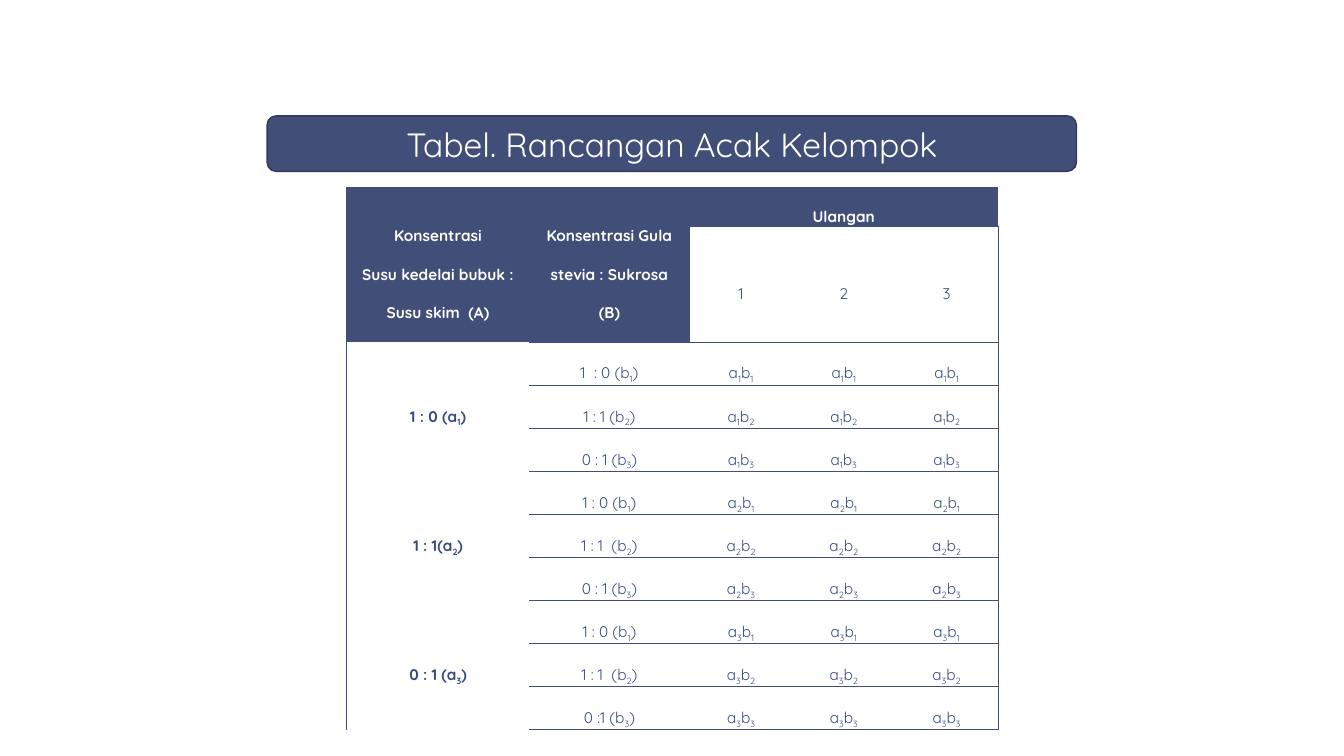
from lxml import etree
from pptx import Presentation
from pptx.dml.color import RGBColor
from pptx.enum.shapes import MSO_SHAPE
from pptx.enum.text import MSO_ANCHOR, PP_ALIGN
from pptx.oxml.ns import qn
from pptx.util import Cm, Pt

CENTER = PP_ALIGN.CENTER
MIDDLE = MSO_ANCHOR.MIDDLE
ROUNDED = MSO_SHAPE.ROUNDED_RECTANGLE
FONT = "Quicksand"
COLORS = {"navy": "414E77", "outline": "303A58", "body": "374C81", "white": "FFFFFF"}
PLAIN_STYLE = "{2D5ABB26-0587-4C30-8999-92F81FD0307C}"
COLUMN_WIDTHS = [4.6, 4.04, 2.59, 2.59, 2.59]
ROW_HEIGHTS = [0.97, 2.87] + [0.97] * 9
SOY_LEVELS = ["1 : 0 (a_1)", "1 : 1(a_2)", "0 : 1 (a_3)"]
SUGAR_LEVELS = [
    ["1  : 0 (b_1)", "1 : 1 (b_2)", "0 : 1 (b_3)"],
    ["1 : 0 (b_1)", "1 : 1  (b_2)", "0 : 1 (b_3)"],
    ["1 : 0 (b_1)", "1 : 1  (b_2)", "0 :1 (b_3)"],
]


def color(name):
    """Return the named colour."""
    return RGBColor.from_string(COLORS[name])


def style_span(span, size, tint, bold=False):
    """Set the font of one run."""
    span.font.name = FONT
    span.font.size = Pt(size)
    span.font.bold = bold
    span.font.color.rgb = color(tint)


def add_title(page, text):
    """Add the rounded title bar."""
    box = page.shapes.add_shape(ROUNDED, Cm(6.73), Cm(2.92), Cm(20.4), Cm(1.4))
    box.shadow.inherit = False
    box.fill.solid()
    box.fill.fore_color.rgb = color("navy")
    box.line.color.rgb = color("outline")
    box.line.width = Pt(1)
    frame = box.text_frame
    frame.text = text
    frame.vertical_anchor = MIDDLE
    frame.paragraphs[0].alignment = CENTER
    style_span(frame.paragraphs[0].runs[0], 24, "white")


def add_spans(para, text, tint, bold):
    """Add text to a paragraph, lowering the character after each underscore."""
    first, *rest = text.split("_")
    pieces = [(first, False)]
    for piece in rest:
        pieces += [(piece[0], True), (piece[1:], False)]
    for piece, lowered in pieces:
        if piece:
            span = para.add_run()
            span.text = piece
            style_span(span, 11, tint, bold)
            if lowered:
                span.font._element.set("baseline", "-25000")


def fill_cell(cell, text, tint="body", bold=False):
    """Write centred, double-spaced text into a cell."""
    cell.vertical_anchor = MIDDLE
    cell.margin_left = cell.margin_right = Cm(0.19)
    cell.margin_top = cell.margin_bottom = 0
    frame = cell.text_frame
    for index, line in enumerate(text.split("\n")):
        para = frame.add_paragraph() if index else frame.paragraphs[0]
        para.alignment = CENTER
        para.line_spacing = 2.0
        add_spans(para, line, tint, bold)


def set_borders(cell, sides):
    """Draw thin navy borders on the given sides of a cell."""
    properties = cell._tc.get_or_add_tcPr()
    for side in "LRTB":
        if side in sides:
            line = etree.SubElement(properties, qn("a:ln" + side), w=str(Pt(0.5)))
            paint = etree.SubElement(line, qn("a:solidFill"))
            etree.SubElement(paint, qn("a:srgbClr"), val=COLORS["navy"])


def cell_sides(row, column):
    """Return the bordered sides of the cell at a grid position."""
    sides = "L" if column == 0 else "R" if column == 4 else ""
    if row == 0:
        sides += "T"
    if column or row % 3 == 1:
        sides += "B"
    return sides


def add_plain_table(page):
    """Add the empty table with its grid, borders and fills."""
    frame = page.shapes.add_table(
        len(ROW_HEIGHTS), len(COLUMN_WIDTHS), Cm(8.74), Cm(4.72),
        Cm(sum(COLUMN_WIDTHS)), Cm(sum(ROW_HEIGHTS)))
    table = frame.table
    table.first_row = table.horz_banding = False
    table._tbl.tblPr.find(qn("a:tableStyleId")).text = PLAIN_STYLE
    for column, width in zip(table.columns, COLUMN_WIDTHS):
        column.width = Cm(width)
    for row, height in zip(table.rows, ROW_HEIGHTS):
        row.height = Cm(height)
    for row in range(len(ROW_HEIGHTS)):
        for column in range(len(COLUMN_WIDTHS)):
            cell = table.cell(row, column)
            set_borders(cell, cell_sides(row, column))
            if row == 0 or (row == 1 and column < 2):
                cell.fill.solid()
                cell.fill.fore_color.rgb = color("navy")
            else:
                cell.fill.background()
    return table


def fill_header(table):
    """Merge and write the header cells."""
    headings = [
        ("Konsentrasi\nSusu kedelai bubuk : Susu skim  (A)", 0, (1, 0)),
        ("Konsentrasi Gula stevia : Sukrosa\n(B)", 1, (1, 1)),
        ("Ulangan", 2, (0, 4)),
    ]
    for text, column, end in headings:
        cell = table.cell(0, column)
        cell.merge(table.cell(*end))
        fill_cell(cell, text, "white", True)
    for number in range(1, 4):
        fill_cell(table.cell(1, number + 1), str(number))


def fill_treatments(table):
    """Write the treatment groups and their repeated combinations."""
    for group, (soy, sugars) in enumerate(zip(SOY_LEVELS, SUGAR_LEVELS)):
        top = 2 + 3 * group
        table.cell(top, 0).merge(table.cell(top + 2, 0))
        fill_cell(table.cell(top, 0), soy, bold=True)
        for level, sugar in enumerate(sugars):
            fill_cell(table.cell(top + level, 1), sugar)
            for column in range(2, 5):
                fill_cell(table.cell(top + level, column), f"a_{group + 1}b_{level + 1}")


def main():
    """Build and save the slide."""
    deck = Presentation()
    deck.slide_width, deck.slide_height = Cm(33.87), Cm(19.05)
    page = deck.slides.add_slide(deck.slide_layouts[6])
    table = add_plain_table(page)
    fill_header(table)
    fill_treatments(table)
    add_title(page, "Tabel. Rancangan Acak Kelompok")
    deck.save("out.pptx")


if __name__ == "__main__":
    main()
